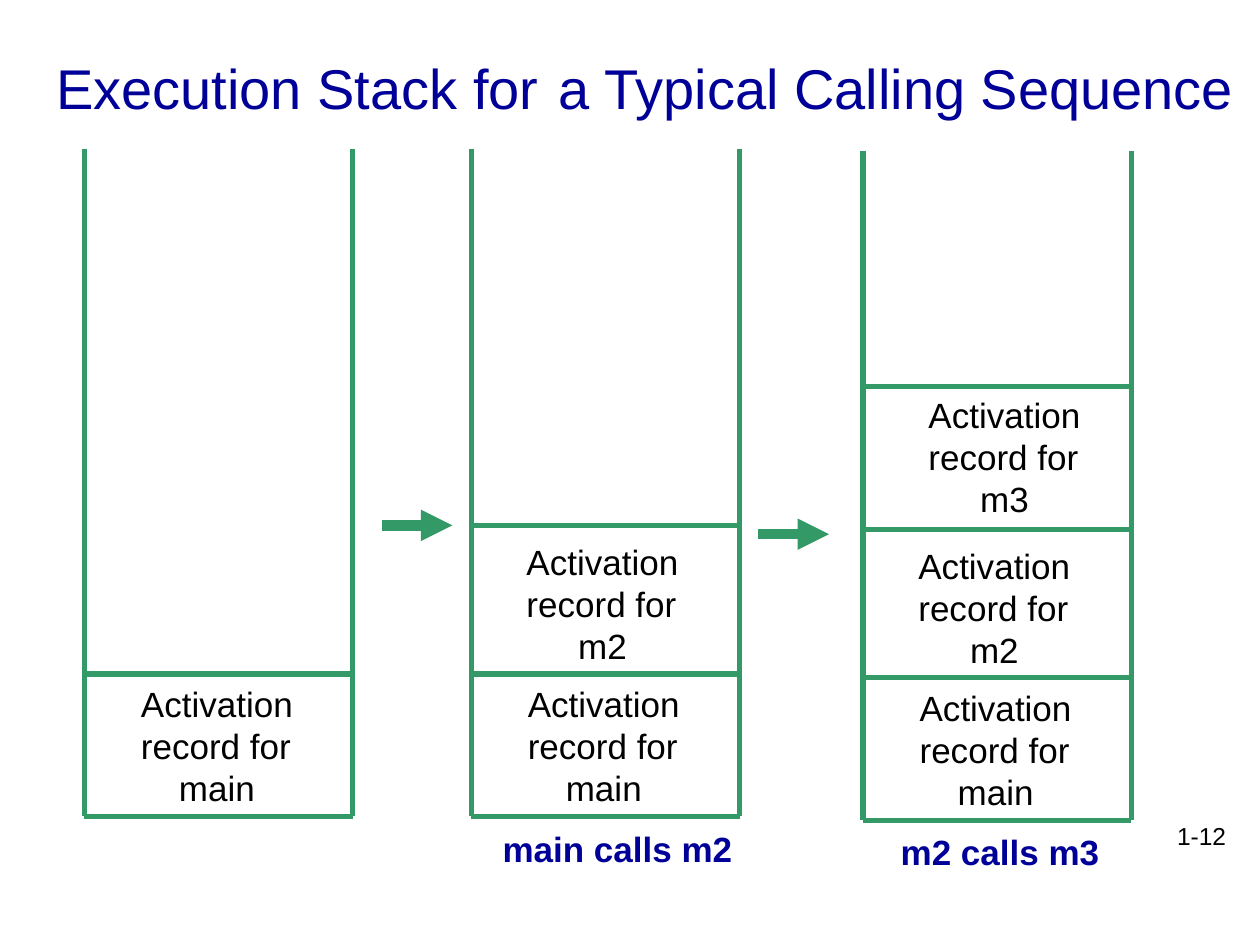
from lxml import etree
from pptx import Presentation
from pptx.dml.color import RGBColor
from pptx.enum.shapes import MSO_CONNECTOR
from pptx.enum.text import MSO_ANCHOR, PP_ALIGN
from pptx.oxml.ns import qn
from pptx.util import Inches, Pt

STRAIGHT = MSO_CONNECTOR.STRAIGHT
TOP, MIDDLE = MSO_ANCHOR.TOP, MSO_ANCHOR.MIDDLE
LEFT, CENTER, RIGHT = PP_ALIGN.LEFT, PP_ALIGN.CENTER, PP_ALIGN.RIGHT
COLORS = {"ink": "000000", "navy": "000099", "green": "339966"}
COLUMNS, ROWS = 100, 75
STACK_WIDTH = 21.3
RECORD_WIDTH, RECORD_HEIGHT = 14.2, 11.1
RECORDS = [
    {"name": "main", "line": 11.3, "text": 11.1, "indent": 3.5},
    {"name": "m2", "line": 23.1, "text": 22.4, "indent": 3.4},
    {"name": "m3", "line": 34.4, "text": 34.4, "indent": 4.2},
]
STACKS = [
    {"left": 6.7, "top": 11.8, "bottom": 64.8, "depth": 1, "caption": None},
    {"left": 37.4, "top": 11.8, "bottom": 64.8, "depth": 2, "caption": ("main calls m2", 38.9, 65.2)},
    {"left": 68.5, "top": 12, "bottom": 65.1, "depth": 3, "caption": ("m2 calls m3", 70.5, 65.4)},
]
ARROWS = [(30.3, 41.7), (60.2, 42.4)]


class SlideBuilder:
    def __init__(self, deck):
        self.cell_width = deck.slide_width / COLUMNS
        self.cell_height = deck.slide_height / ROWS
        self.page = deck.slides.add_slide(deck.slide_layouts[5])

    def across(self, columns):
        return round(columns * self.cell_width)

    def down(self, rows):
        return round(rows * self.cell_height)

    def place(self, left, top, width, height):
        return self.across(left), self.down(top), self.across(width), self.down(height)

    def style(self, span, color="ink", **values):
        for name, value in {"name": "Arial", "size": Pt(20), "bold": False, **values}.items():
            setattr(span.font, name, value)
        span.font.color.rgb = RGBColor.from_string(COLORS[color])

    def title(self, spans, area):
        box = self.page.shapes.title
        for name, value in zip(("left", "top", "width", "height"), self.place(*area)):
            setattr(box, name, value)
        box.text_frame.vertical_anchor = MIDDLE
        para = box.text_frame.paragraphs[0]
        para.alignment = CENTER
        for words, size in spans:
            span = para.add_run()
            span.text = words
            self.style(span, "navy", size=Pt(size))

    def text(self, lines, area, wrap=True, **values):
        box = self.page.shapes.add_textbox(*self.place(*area))
        frame = box.text_frame
        frame.word_wrap = wrap
        frame.vertical_anchor = TOP
        for index, (words, alignment) in enumerate(lines):
            para = frame.add_paragraph() if index else frame.paragraphs[0]
            para.alignment = alignment
            span = para.add_run()
            span.text = words
            self.style(span, **values)

    def line(self, start, end, weight=3, arrow=False):
        points = [self.across(start[0]), self.down(start[1]), self.across(end[0]), self.down(end[1])]
        line = self.page.shapes.add_connector(STRAIGHT, *points)
        line.line.width = Pt(weight)
        line.line.color.rgb = RGBColor.from_string(COLORS["green"])
        if arrow:
            etree.SubElement(line.line._get_or_add_ln(), qn("a:tailEnd"), type="triangle")
        etree.SubElement(line._element.spPr, qn("a:effectLst"))

    def stack(self, left, top, bottom, depth, caption):
        right = left + STACK_WIDTH
        for side in (left, right):
            self.line((side, top), (side, bottom))
        records = RECORDS[:depth]
        for height in [0] + [record["line"] for record in records]:
            self.line((left, bottom - height), (right, bottom - height))
        for record in records:
            lines = [("Activation", LEFT), ("record for", LEFT), (record["name"], CENTER)]
            area = (left + record["indent"], bottom - record["text"], RECORD_WIDTH, RECORD_HEIGHT)
            self.text(lines, area, wrap=False)
        if caption:
            words, caption_left, caption_top = caption
            area = (caption_left, caption_top, STACK_WIDTH, 4.3)
            self.text([(words, LEFT)], area, color="navy", bold=True)


def main():
    deck = Presentation()
    deck.slide_width, deck.slide_height = Inches(10), Inches(7.5)
    builder = SlideBuilder(deck)
    builder.title(
        [("Execution Stack for", 32), (" ", 40), ("a Typical Calling Sequence", 32)],
        (1.2, 1.5, 100, 10),
    )
    for stack in STACKS:
        builder.stack(**stack)
    for left, top in ARROWS:
        builder.line((left, top), (left + 5.6, top), weight=6, arrow=True)
    builder.text([("1-12", RIGHT)], (77.5, 64.7, 20.8, 5), size=Pt(14))
    deck.save("out.pptx")


if __name__ == "__main__":
    main()
